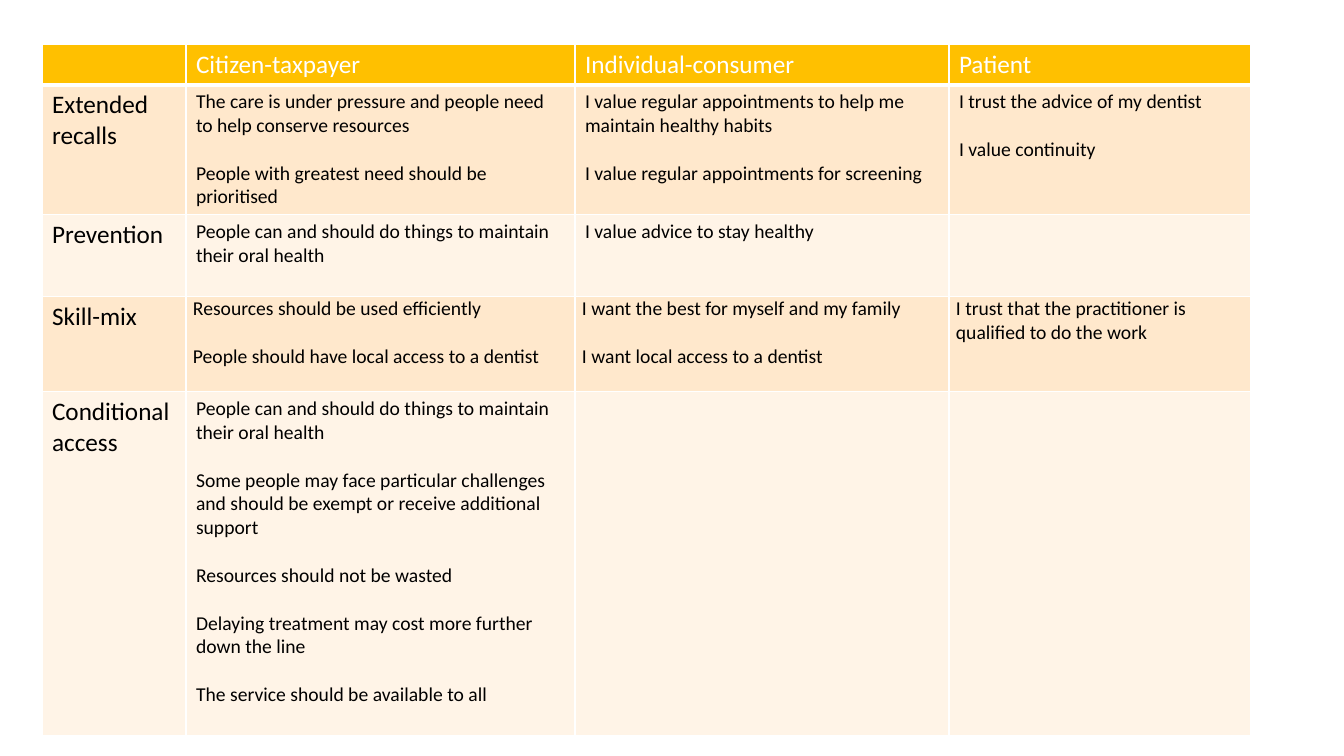
from lxml.etree import SubElement
from pptx import Presentation
from pptx.dml.color import RGBColor
from pptx.oxml.ns import qn
from pptx.util import Emu, Pt

PX_PER_INCH = 100.8
COLUMN_WIDTHS = [144, 389, 374, 302]
ROW_HEIGHTS = [40, 130, 82, 95, 344]
WHITE, BLACK, AMBER = "FFFFFF", "000000", "FFC000"
BANDS = ["FFE8CC", "FFF4E7"]
FONT = "Calibri"
LINE_GAP = 17

HEADER = ["", "Citizen-taxpayer", "Individual-consumer", "Patient"]
ROWS = [
    ("Extended recalls",
     ["The care is under pressure and people need to help conserve resources",
      "People with greatest need should be prioritised"],
     ["I value regular appointments to help me maintain healthy habits",
      "I value regular appointments for screening"],
     ["I trust the advice of my dentist", "I value continuity"]),
    ("Prevention",
     ["People can and should do things to maintain their oral health"],
     ["I value advice to stay healthy"],
     []),
    ("Skill-mix",
     ["Resources should be used efficiently",
      "People should have local access to a dentist"],
     ["I want the best for myself and my family",
      "I want local access to a dentist"],
     ["I trust that the practitioner is qualified to do the work"]),
    ("Conditional access",
     ["People can and should do things to maintain their oral health",
      "Some people may face particular challenges and should be exempt "
      "or receive additional support",
      "Resources should not be wasted",
      "Delaying treatment may cost more further down the line",
      "The service should be available to all"],
     [], []),
]


def px(n):
    return Emu(round(n * 914400 / PX_PER_INCH))


def rgb(value):
    return RGBColor.from_string(value)


def set_borders(cell, top=1, bottom=1):
    tcPr = cell._tc.get_or_add_tcPr()
    for side, width in (("L", 1), ("R", 1), ("T", top), ("B", bottom)):
        ln = SubElement(tcPr, qn(f"a:ln{side}"), w=str(Pt(width)))
        SubElement(SubElement(ln, qn("a:solidFill")), qn("a:srgbClr"), val=WHITE)


def write_cell(cell, paragraphs, size, color, fill):
    cell.fill.solid()
    cell.fill.fore_color.rgb = rgb(fill)
    tf = cell.text_frame
    for i, text in enumerate(paragraphs):
        p = tf.add_paragraph() if i else tf.paragraphs[0]
        if i:
            p.space_before = Pt(LINE_GAP)
        r = p.add_run()
        r.text = text
        r.font.name = FONT
        r.font.size = Pt(size)
        r.font.bold = False
        r.font.color.rgb = rgb(color)


def add_views_table(s, left, top):
    """Place the table of views, one row per policy and one column per role."""
    table = s.shapes.add_table(
        len(ROW_HEIGHTS), len(COLUMN_WIDTHS), px(left), px(top),
        px(sum(COLUMN_WIDTHS)), px(sum(ROW_HEIGHTS))).table
    for column, width in zip(table.columns, COLUMN_WIDTHS):
        column.width = px(width)
    for row, height in zip(table.rows, ROW_HEIGHTS):
        row.height = px(height)

    for c, heading in enumerate(HEADER):
        cell = table.cell(0, c)
        set_borders(cell, bottom=3)
        write_cell(cell, [heading] if heading else [], 18, WHITE, AMBER)

    for r, (policy, *views) in enumerate(ROWS, start=1):
        band = BANDS[(r - 1) % 2]
        for c, paragraphs in enumerate([[policy], *views]):
            cell = table.cell(r, c)
            set_borders(cell, top=3 if r == 1 else 1)
            write_cell(cell, paragraphs, 14 if c else 18, BLACK, band)
            if policy == "Skill-mix" and c:
                cell.margin_left = cell.margin_right = px(7)
                cell.margin_top = cell.margin_bottom = 0


def main():
    prs = Presentation()
    prs.slide_width, prs.slide_height = px(1344), px(756)
    s = prs.slides.add_slide(prs.slide_layouts[6])
    add_views_table(s, 42, 44)
    prs.save("out.pptx")


if __name__ == "__main__":
    main()
